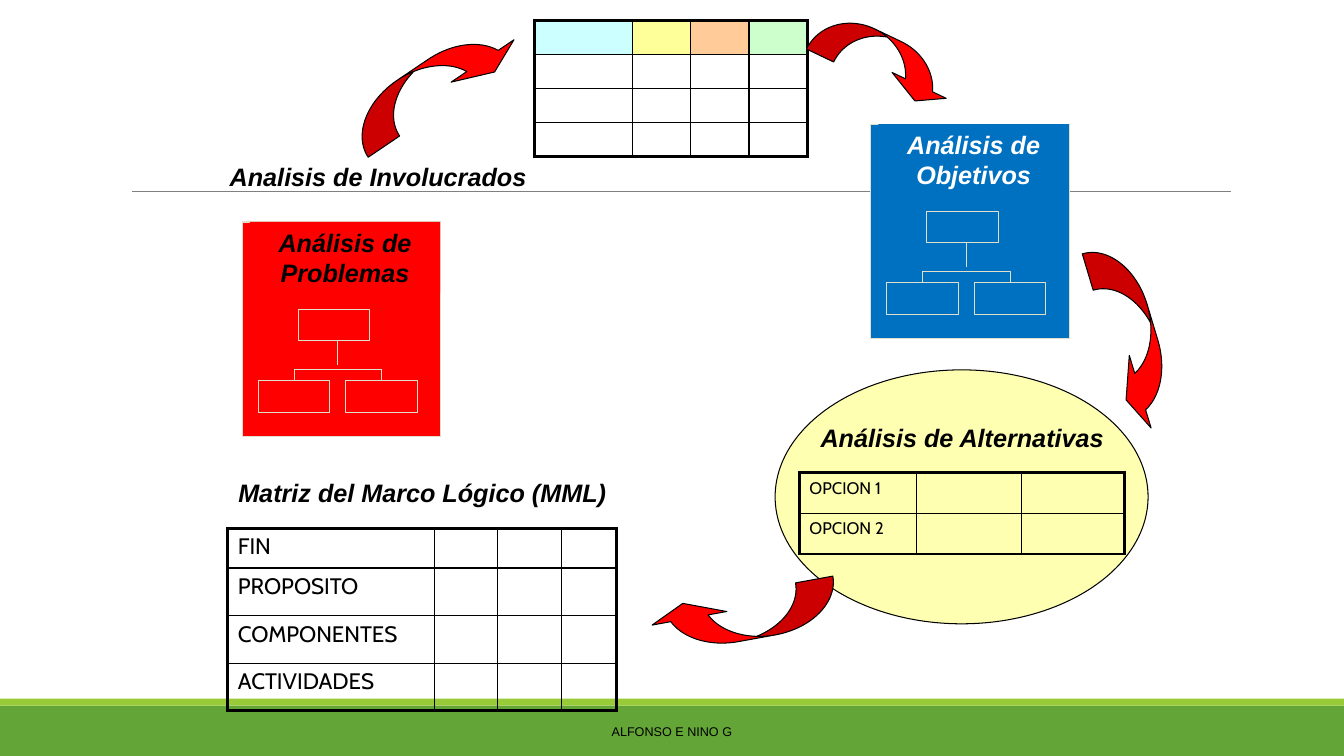
from lxml import etree
from pptx import Presentation
from pptx.dml.color import RGBColor
from pptx.enum.shapes import MSO_CONNECTOR, MSO_SHAPE
from pptx.enum.text import MSO_ANCHOR, PP_ALIGN
from pptx.oxml.ns import qn
from pptx.util import Pt

RECT, OVAL = MSO_SHAPE.RECTANGLE, MSO_SHAPE.OVAL
CURVED_ARROW = MSO_SHAPE.CURVED_DOWN_ARROW
STRAIGHT, ELBOW = MSO_CONNECTOR.STRAIGHT, MSO_CONNECTOR.ELBOW
LEFT, CENTER = PP_ALIGN.LEFT, PP_ALIGN.CENTER
TOP, MIDDLE = MSO_ANCHOR.TOP, MSO_ANCHOR.MIDDLE

BLACK, WHITE, RED, BLUE = "000000", "FFFFFF", "FF0000", "0070C0"
TREE_LINE = "E2DFCC"


def rgb(value):
    return RGBColor.from_string(value)


def add_shape(shapes, kind, box, fill, line=None):
    sp = shapes.add_shape(kind, *map(Pt, box))
    sp.shadow.inherit = False
    sp.fill.solid()
    sp.fill.fore_color.rgb = rgb(fill)
    if line:
        sp.line.color.rgb = rgb(line)
        sp.line.width = Pt(0.75)
    else:
        sp.line.fill.background()
    return sp


def add_line(shapes, kind, ends, color, width):
    c = shapes.add_connector(kind, *map(Pt, ends))
    c.line.color.rgb = rgb(color)
    c.line.width = Pt(width)
    etree.SubElement(c._element.spPr, qn("a:effectLst"))
    return c


def set_text(tf, text, size, color=BLACK, font="Arial", heading=False,
             align=LEFT, anchor=TOP):
    tf.word_wrap = True
    tf.vertical_anchor = anchor
    tf.text = text
    p = tf.paragraphs[0]
    p.alignment = align
    f = p.runs[0].font
    f.name, f.size, f.color.rgb = font, Pt(size), rgb(color)
    f.bold = f.italic = heading


def add_label(shapes, box, text, size=18, heading=True, align=CENTER, anchor=TOP):
    tb = shapes.add_textbox(*map(Pt, box))
    set_text(tb.text_frame, text, size, heading=heading, align=align, anchor=anchor)


def set_borders(cell, widths):
    tc_pr = cell._tc.get_or_add_tcPr()
    for side, width in zip("LRTB", widths):
        ln = etree.SubElement(tc_pr, qn(f"a:ln{side}"), w=str(Pt(width)))
        fill = etree.SubElement(ln, qn("a:solidFill"))
        etree.SubElement(fill, qn("a:srgbClr"), val=BLACK)


def add_matrix(shapes, left, top, cols, rows, size=12, labels=(), header_fills=()):
    """Table with a thick frame, thin inner lines and labels in column one."""
    table = shapes.add_table(len(rows), len(cols), Pt(left), Pt(top),
                             Pt(sum(cols)), Pt(sum(rows))).table
    table.first_row = table.horz_banding = False
    for col, width in zip(table.columns, cols):
        col.width = Pt(width)
    for row, height in zip(table.rows, rows):
        row.height = Pt(height)
    for i in range(len(rows)):
        for j in range(len(cols)):
            cell = table.cell(i, j)
            on_frame = (j == 0, j == len(cols) - 1, i == 0, i == len(rows) - 1)
            set_borders(cell, [2.25 if edge else 1 for edge in on_frame])
            if i == 0 and header_fills:
                cell.fill.solid()
                cell.fill.fore_color.rgb = rgb(header_fills[j])
            else:
                cell.fill.background()
            if j == 0 and labels:
                set_text(cell.text_frame, labels[i], size, font="Cabin")
            else:
                p = cell.text_frame.paragraphs[0]
                p._p.get_or_add_endParaRPr().set("sz", str(size * 100))


def add_tree_card(shapes, left, top, title, fill, title_color):
    """Coloured card with a heading and a small two-branch tree."""
    group = shapes.add_group_shape().shapes
    node_w, node_h, child_y = 51, 22.5, 113.5
    child_xs = (11.5, 74)
    add_shape(group, RECT, (left, top, 142, 153), fill, TREE_LINE)
    for x, y in [(40, 62.5)] + [(x, child_y) for x in child_xs]:
        add_shape(group, RECT, (left + x, top + y, node_w, node_h), fill, TREE_LINE)

    # Bracket over the children: a flat elbow turned upright
    span, rise, flat = child_xs[1] - child_xs[0], 8.64, 0.12
    axis = left + (sum(child_xs) + node_w) / 2
    base = top + child_y
    bracket = add_line(group, ELBOW, (axis, base + span / 2, axis + flat, base - span / 2),
                       TREE_LINE, 0.75)
    sp_pr = bracket._element.spPr
    sp_pr.find(qn("a:xfrm")).set("rot", "5400000")
    guides = sp_pr.find(qn("a:prstGeom")).find(qn("a:avLst"))
    etree.SubElement(guides, qn("a:gd"), name="adj1",
                     fmla=f"val {round(-rise / flat * 100000)}")

    # Stem and heading
    add_line(group, STRAIGHT, (axis, top + 102, axis, top + 85), TREE_LINE, 0.75)
    head = add_shape(group, RECT, (left + 5.5, top, 136, 50.4), fill)
    set_text(head.text_frame, title, 18, title_color, heading=True, align=CENTER)


def add_backdrop(shapes, width, height):
    add_shape(shapes, RECT, (0, height - 36, width, 36), "63A537")
    add_shape(shapes, RECT, (0, height - 41, width, 5), "99CB38")
    add_line(shapes, STRAIGHT, (94.3, 136.8, 879, 136.8), "808080", 0.5)


def add_stakeholders(shapes, left, top):
    add_matrix(shapes, left, top, [70, 41.7, 41.7, 41.7], [24.3] * 4,
               header_fills=("CCFFFF", "FFFF99", "FFCC99", "CCFFCC"))
    add_label(shapes, (left - 224.6, top + 97.2, 232.6, 29), "Analisis de Involucrados",
              align=LEFT)


def add_alternatives(shapes, left, top):
    oval = add_shape(shapes, OVAL, (left, top, 266.4, 181.4), "FFFF99", BLACK)
    color = oval._element.spPr.find(qn("a:solidFill"))[0]
    etree.SubElement(color, qn("a:alpha"), val="75000")
    add_matrix(shapes, left + 17.3, top + 73.5, [83.5, 75, 74], [29, 29],
               labels=("OPCION 1", "OPCION 2"))
    add_label(shapes, (left + 17.3, top + 33.8, 232.6, 29), "Análisis de Alternativas")


def add_logframe(shapes, left, top):
    add_label(shapes, (left, top, 278, 29), "Matriz del Marco Lógico (MML)")
    add_matrix(shapes, left, top + 39.6, [147.5, 45.4, 45.4, 39.6], [28.4, 34, 34, 34],
               size=16, labels=("FIN", "PROPOSITO", "COMPONENTES", "ACTIVIDADES"))


def add_flow_arrow(shapes, left, top, width, angle, thickness):
    arrow = add_shape(shapes, CURVED_ARROW, (left, top, width, 34), RED, BLACK)
    arrow.rotation = angle
    for i, value in enumerate((thickness, 2 * thickness, 0.333)):
        arrow.adjustments[i] = value


def main():
    prs = Presentation()
    prs.slide_width, prs.slide_height = Pt(960), Pt(540)
    shapes = prs.slides.add_slide(prs.slide_layouts[6]).shapes

    add_backdrop(shapes, 960, 540)
    add_stakeholders(shapes, 381.6, 14.4)
    add_tree_card(shapes, 173, 158.6, "Análisis de Problemas", RED, BLACK)
    add_tree_card(shapes, 622, 88.6, "Análisis de Objetivos", BLUE, WHITE)
    add_alternatives(shapes, 553.7, 264.2)
    add_logframe(shapes, 162.7, 337.7)

    # Arrows between the steps
    for left, top, width, angle, thickness in (
        (241.9, 43.2, 136, 326, 0.797),
        (578.2, 25.9, 107.3, 25.6, 0.631),
        (740.9, 224.6, 136, 73.3, 0.797),
        (463, 423.4, 136, 169.7, 0.797),
    ):
        add_flow_arrow(shapes, left, top, width, angle, thickness)

    # Footer
    add_label(shapes, (290.2, 508.3, 379.4, 28.8), "ALFONSO E NINO G", size=9,
              heading=False, anchor=MIDDLE)
    prs.save("out.pptx")


if __name__ == "__main__":
    main()
